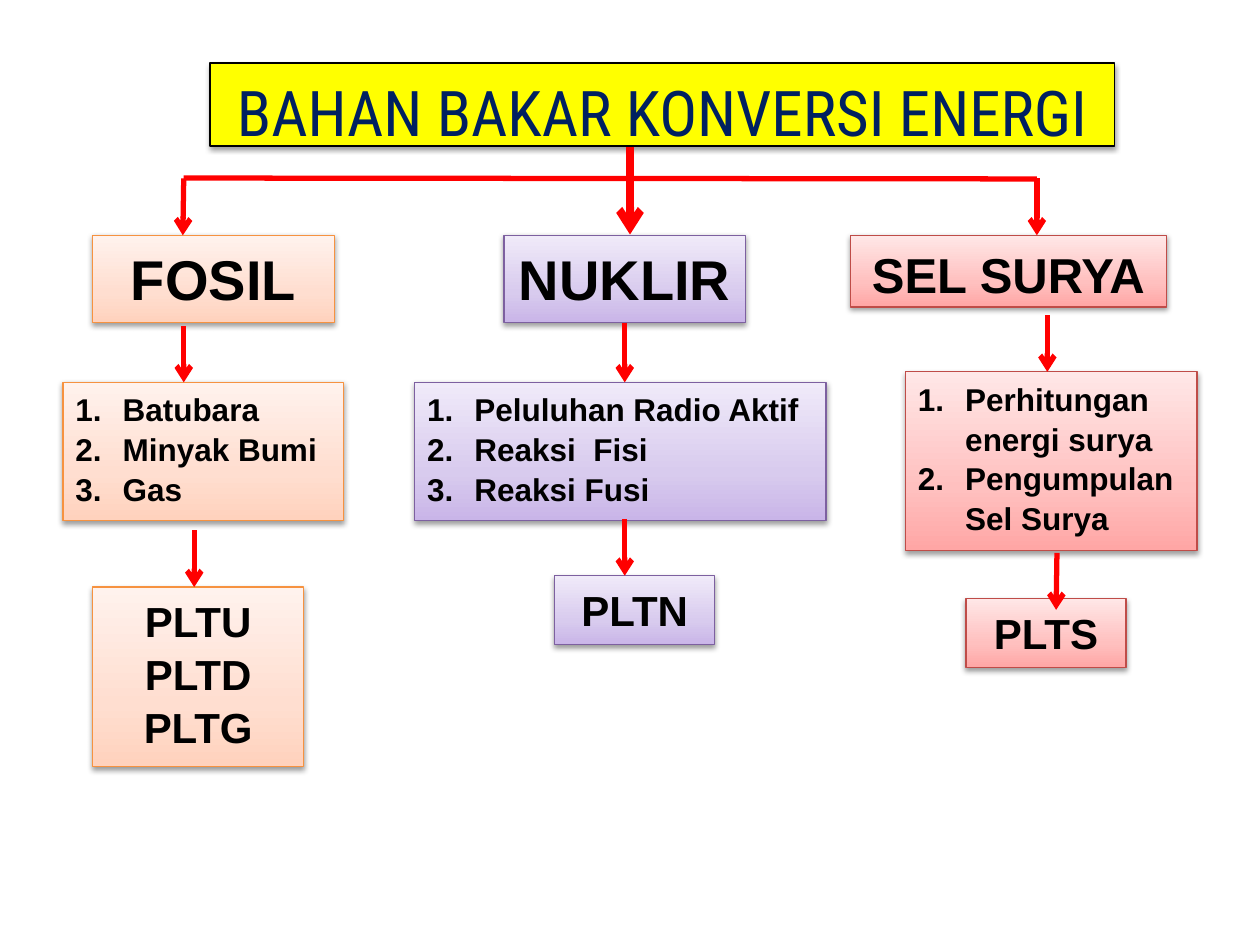
from copy import deepcopy
from lxml.etree import SubElement
from pptx import Presentation
from pptx.dml.color import RGBColor
from pptx.enum.shapes import MSO_CONNECTOR, MSO_SHAPE
from pptx.enum.text import MSO_ANCHOR, MSO_AUTO_SIZE, PP_ALIGN
from pptx.oxml.ns import qn
from pptx.util import Pt

hues = {
    "yellow": "FFFF00", "navy": "002060", "black": "000000", "red": "FF0000",
    "fosil": ("F69240", "FFD2BD", "FFDED0", "FFF2ED"),
    "nuklir": ("7D60A0", "C9B5E8", "D8CBEE", "F0EAF9"),
    "surya": ("BF4C48", "FFA6A5", "FFC0BF", "FFE7E7"),
}


def frame(shape, edge):
    shape.line.color.rgb = RGBColor.from_string(edge)
    shape.line.width = Pt(0.75)
    shape.shadow.inherit = False
    effects = shape._element.spPr.find(qn("a:effectLst"))
    shade = SubElement(effects, qn("a:outerShdw"), blurRad="40000",
                       dist="20000", dir="5400000", rotWithShape="0")
    tone = SubElement(shade, qn("a:srgbClr"), val=hues["black"])
    SubElement(tone, qn("a:alpha"), val="38000")


def write(shape, lines, size, font, color, bold, listed):
    text = shape.text_frame
    text.word_wrap = True
    text.auto_size = MSO_AUTO_SIZE.NONE
    text.vertical_anchor = MSO_ANCHOR.TOP
    for i, line in enumerate(lines):
        para = text.add_paragraph() if i else text.paragraphs[0]
        para.alignment = PP_ALIGN.LEFT if listed else PP_ALIGN.CENTER
        para.line_spacing = 1.05
        if listed:
            props = para._p.get_or_add_pPr()
            props.set("marL", str(Pt(27)))
            props.set("indent", str(-Pt(27)))
            SubElement(props, qn("a:buFont"), typeface="+mj-lt")
            SubElement(props, qn("a:buAutoNum"), type="arabicPeriod")
        run = para.add_run()
        run.text = line
        run.font.name = font
        run.font.size = Pt(size)
        run.font.bold = bold
        run.font.color.rgb = RGBColor.from_string(color)


deck = Presentation()
deck.slide_width, deck.slide_height = Pt(720), Pt(540)
slide = deck.slides.add_slide(deck.slide_layouts[5])

title = slide.shapes.title
title.left, title.top, title.width, title.height = Pt(120), Pt(36), Pt(517), Pt(47.5)
title.fill.solid()
title.fill.fore_color.rgb = RGBColor.from_string(hues["yellow"])
frame(title, hues["black"])
write(title, ["BAHAN BAKAR KONVERSI ENERGI"], 36, "Roboto Condensed",
      hues["navy"], False, False)

boxes = [
    ("fosil", 53, 134.5, 138, 50, 32, ["FOSIL"]),
    ("surya", 486, 134.5, 180.5, 41, 28, ["SEL SURYA"]),
    ("nuklir", 288, 134.5, 138, 50, 32, ["NUKLIR"]),
    ("fosil", 36, 218.5, 160.5, 79, 18, ["Batubara", "Minyak Bumi", "Gas"]),
    ("nuklir", 237, 218.5, 235, 79, 18,
     ["Peluluhan Radio Aktif", "Reaksi  Fisi", "Reaksi Fusi"]),
    ("surya", 517.5, 212.5, 166.5, 102, 18,
     ["Perhitungan energi surya", "Pengumpulan Sel Surya"]),
    ("fosil", 53, 335.5, 120.5, 102.5, 24, ["PLTU", "PLTD", "PLTG"]),
    ("nuklir", 317, 329, 91.5, 39.5, 24, ["PLTN"]),
    ("surya", 552, 342, 91.5, 39.5, 24, ["PLTS"]),
]
cards = {}
for kind, x, y, w, h, size, lines in boxes:
    card = slide.shapes.add_shape(MSO_SHAPE.RECTANGLE, Pt(x), Pt(y), Pt(w), Pt(h))
    edge, *tints = hues[kind]
    card.fill.gradient()
    card.fill.gradient_angle = 90
    stops = card._element.spPr.find(".//" + qn("a:gsLst"))
    stops.insert(1, deepcopy(stops[0]))
    for stop, place, tint in zip(card.fill.gradient_stops, (0, 0.35, 1), tints):
        stop.position = place
        stop.color.rgb = RGBColor.from_string(tint)
    frame(card, edge)
    write(card, lines, size, "Arial", hues["black"], True, size == 18)
    cards[lines[0]] = card

links = [
    (105, 101.75, 592.5, 102.25, 3, False, None),
    (105, 102, 104.5, 134.5, 3, True, None),
    (598.5, 180, 598.5, 212.5, 3, True, None),
    (357, 186.5, 357, 218.5, 3, True, "NUKLIR"),
    (111, 303, 111, 335.5, 3, True, None),
    (105, 186.5, 105, 218.5, 3, True, None),
    (592.5, 101.75, 592.5, 134.5, 3, True, None),
    (604, 316, 603.5, 348.5, 3, True, None),
    (357, 296.5, 357, 329, 3, True, None),
    (360, 84, 360, 134, 4.5, True, None),
]
for x1, y1, x2, y2, width, tip, source in links:
    link = slide.shapes.add_connector(MSO_CONNECTOR.STRAIGHT,
                                      Pt(x1), Pt(y1), Pt(x2), Pt(y2))
    link.line.color.rgb = RGBColor.from_string(hues["red"])
    link.line.width = Pt(width)
    if tip:
        SubElement(link.line._get_or_add_ln(), qn("a:tailEnd"), type="arrow")
    SubElement(link._element.spPr, qn("a:effectLst"))
    if source:
        link.begin_connect(cards[source], 2)

deck.save("out.pptx")
